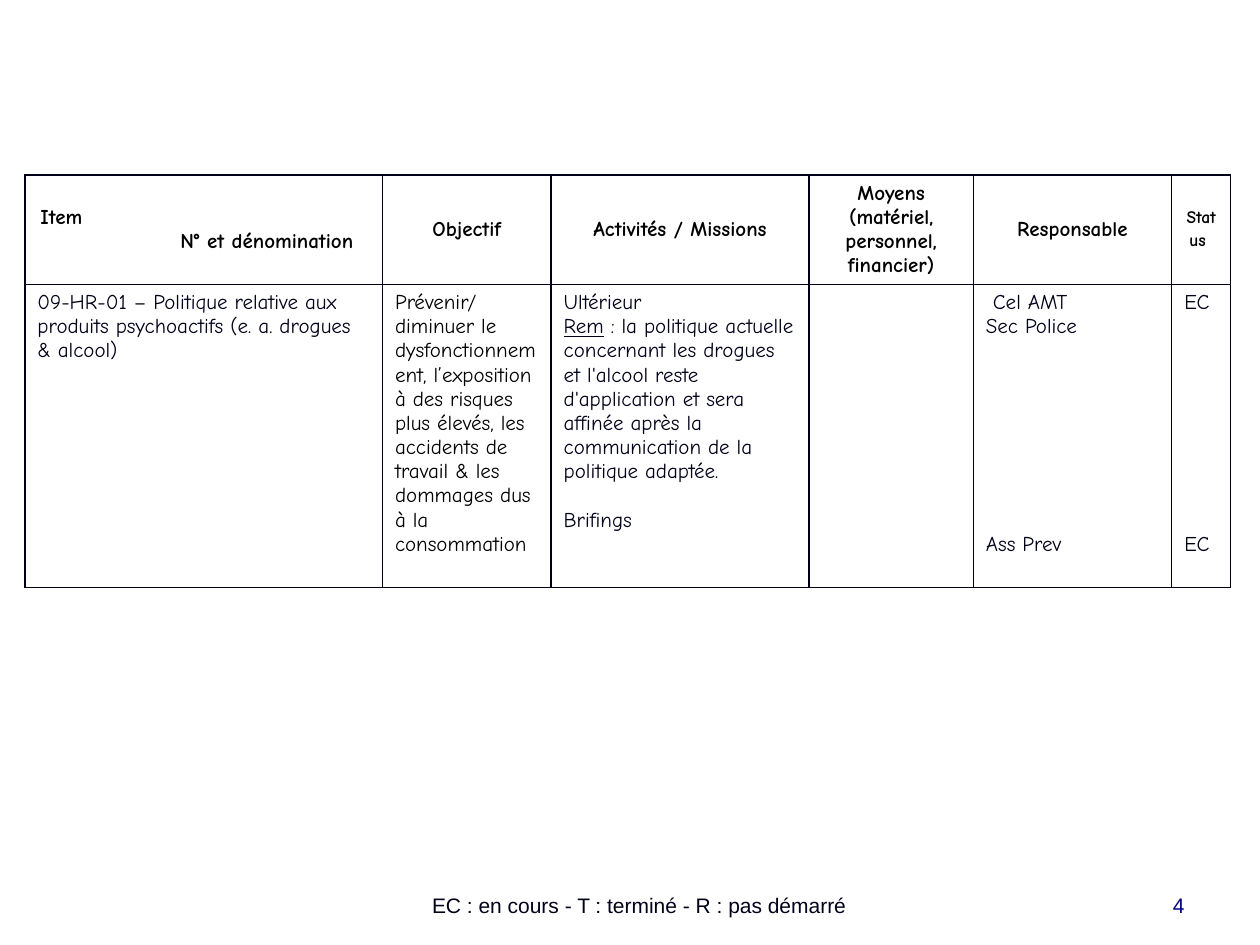
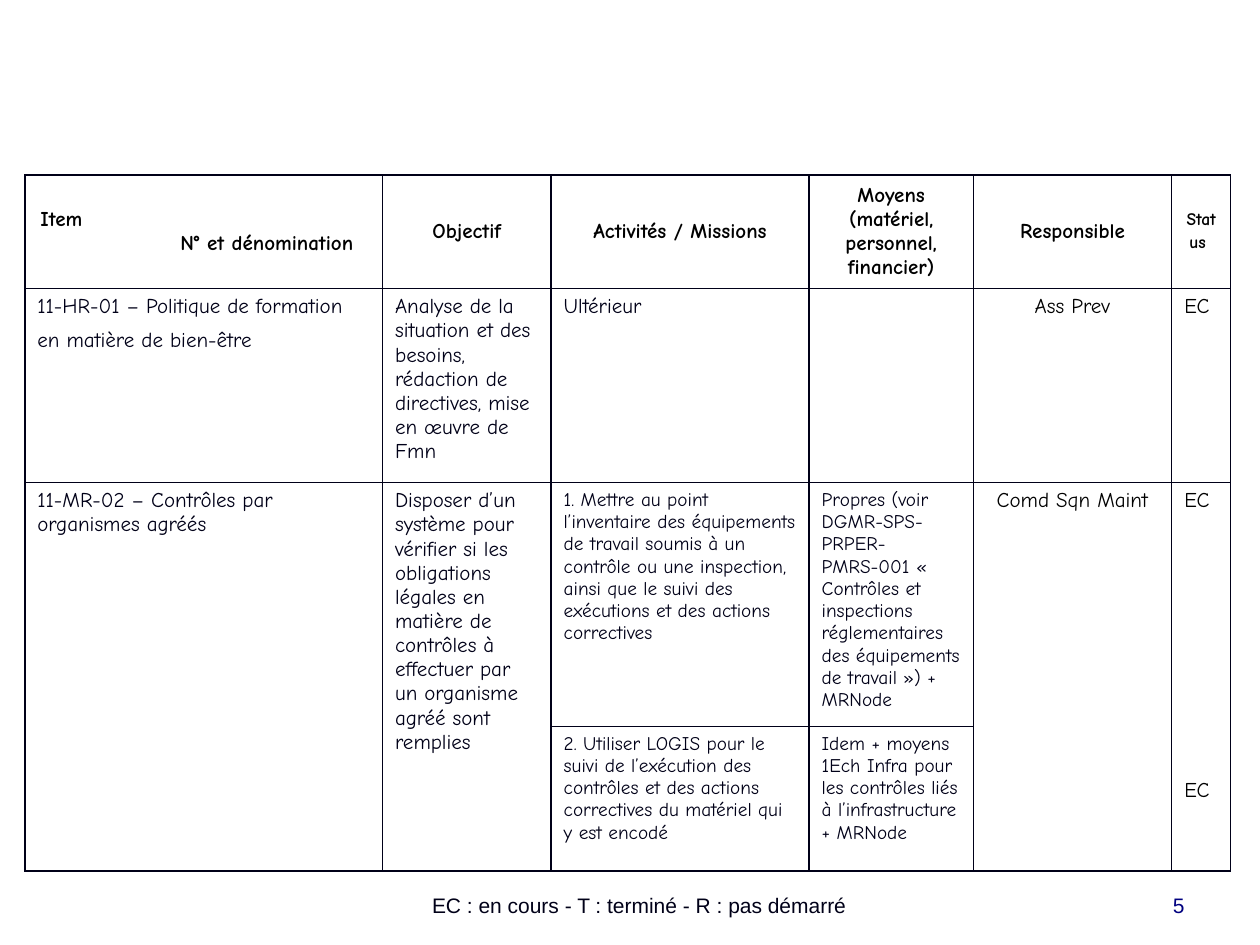
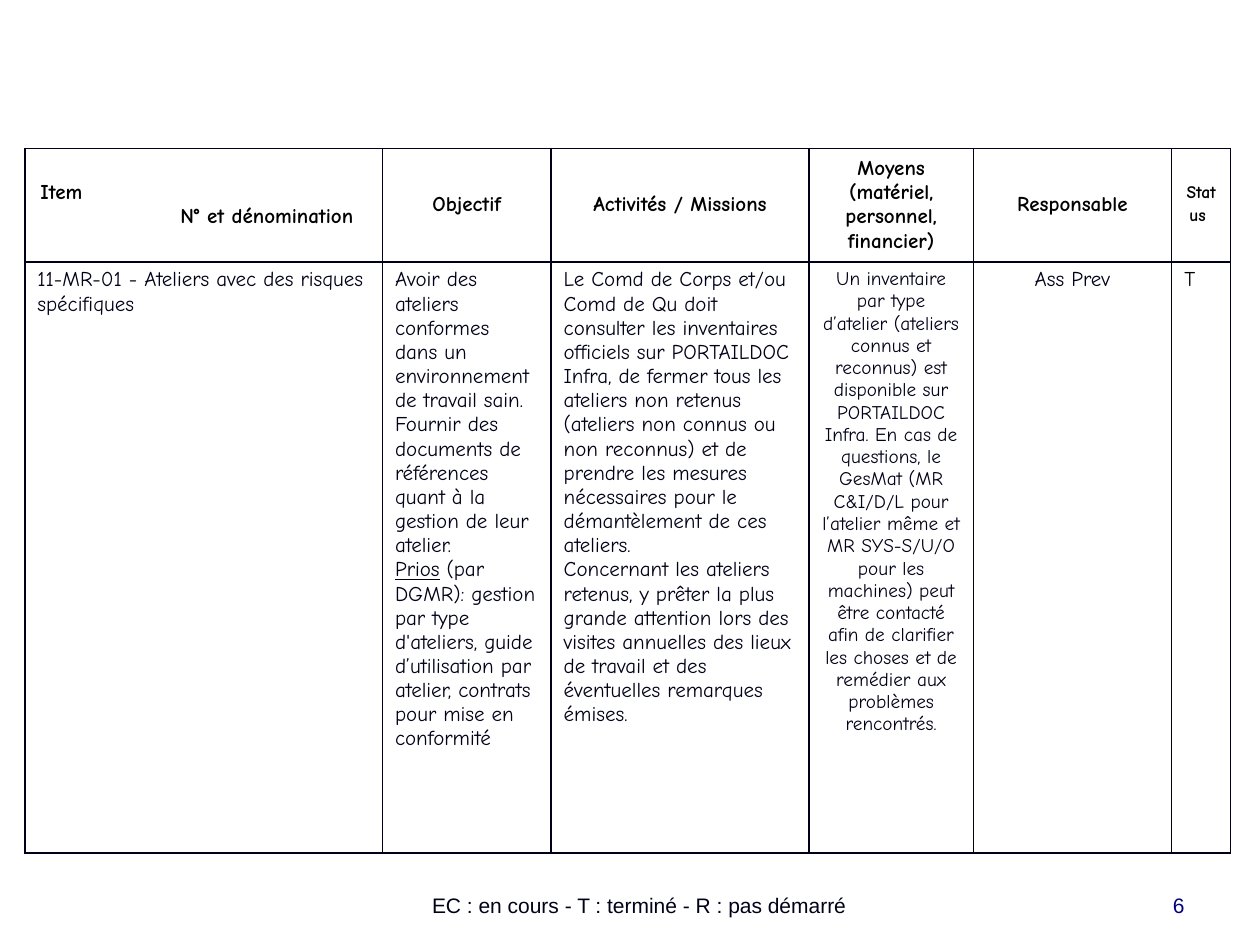
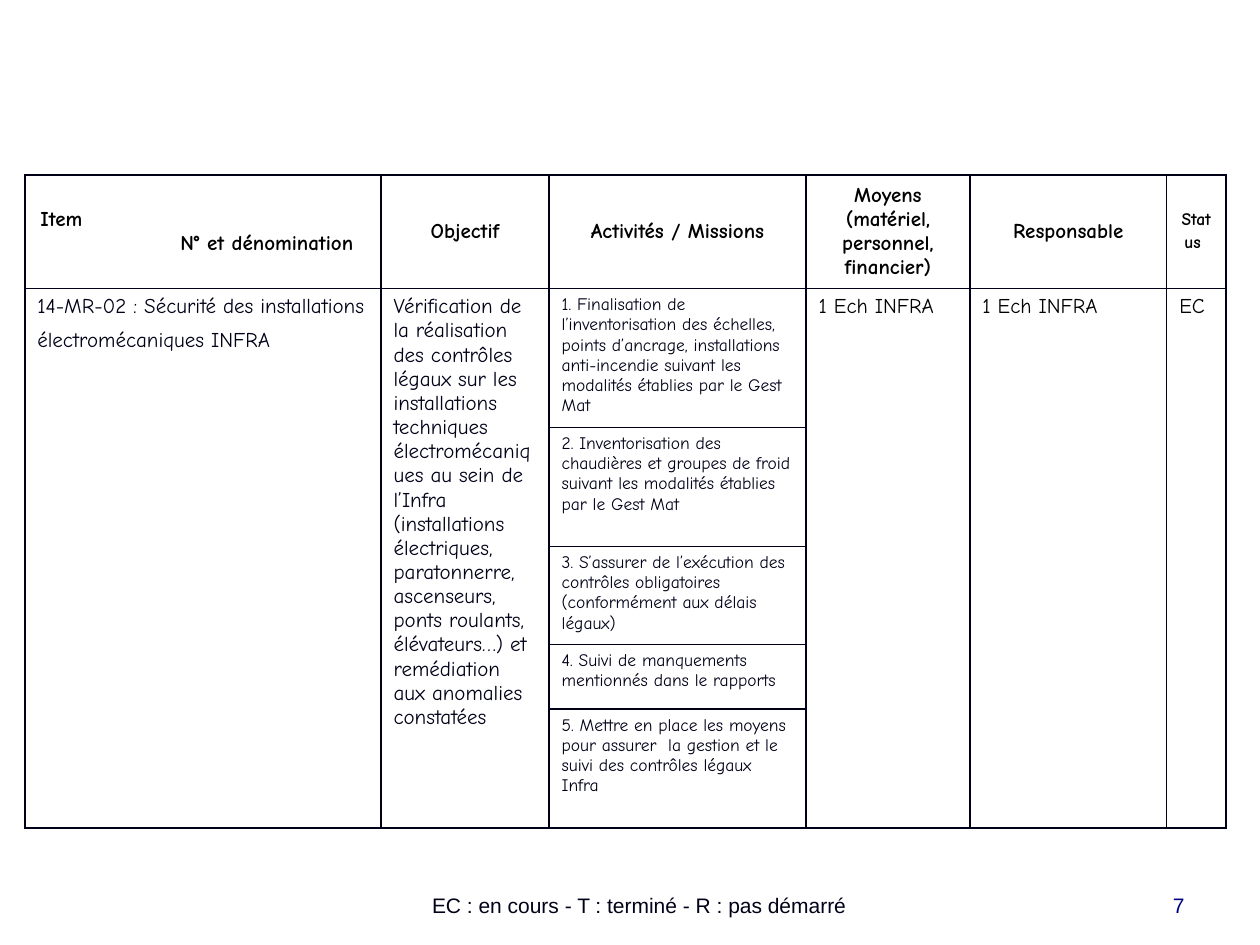
from lxml import etree
from pptx import Presentation
from pptx import util as u
from pptx.dml.color import RGBColor
from pptx.enum import text as t
from pptx.oxml import ns

INK = RGBColor(0x00, 0x00, 0x18)
BLACK = RGBColor(0x00, 0x00, 0x00)
NAVY = RGBColor(0x00, 0x00, 0x80)
FONT = "Comic Neue"
LINE = 13.8  # height of one text line, in points
MID, LEFT, RIGHT = t.PP_ALIGN.CENTER, t.PP_ALIGN.LEFT, t.PP_ALIGN.RIGHT

HEADS = ["Item\nN° et dénomination", "Objectif", "Activités / Missions",
         "Moyens (matériel, personnel, financier)", "Responsable", "Status"]
LEGEND = "EC : en cours - T : terminé - R : pas démarré"
COLS = [7.21, 3.4, 5.2, 3.31, 4, 1.19]
SLIM = [7.18, 3.39, 5.18, 3.3, 3.97, 1.19]
HEAD = {"size": 12, "bold": True, "color": BLACK, "align": MID}
DARK = {"color": BLACK}
SMALL = {"size": 11}
TINY = {"size": 10}


def put(frame, words, size=12, color=INK, align=LEFT, bold=False, font=FONT, gap=0):
    """Write one paragraph a line; _word_ is underlined, gap is lines before the last."""
    lines = words.split("\n")
    for n, line in enumerate(lines):
        para = frame.paragraphs[0] if n == 0 else frame.add_paragraph()
        para.alignment = align
        if gap and n == len(lines) - 1:
            para.space_before = u.Pt(gap * LINE)
        for k, part in enumerate(line.split("_")):
            if not part:
                continue
            run = para.add_run()
            run.text = part
            look = {"name": font, "size": u.Pt(size), "bold": bold, "underline": k % 2 == 1}
            for key, val in look.items():
                setattr(run.font, key, val)
            run.font.color.rgb = color


# Each cell: (row, column): (text, format); "span" merges a cell down to the last row.
PAGES = [
    {"num": 4, "top": 3.53, "cols": COLS, "rows": [2.2, 6.11], "cells": {
        (1, 0): ("09-HR-01 – Politique relative aux produits psychoactifs (e. a. drogues & alcool)", {}),
        (1, 1): ("Prévenir/diminuer le dysfonctionnement, l’exposition à des risques plus élevés, "
                 "les accidents de travail & les dommages dus à la consommation", DARK),
        (1, 2): ("Ultérieur\n_Rem_ : la politique actuelle concernant les drogues et l'alcool reste "
                 "d'application et sera\naffinée après la communication de la politique adaptée.\n"
                 "Brifings", {"gap": 1}),
        (1, 4): (" Cel AMT\nSec Police\nAss Prev", {"gap": 8}),
        (1, 5): ("EC\nEC", {"gap": 9}),
    }},
    {"num": 5, "top": 3.53, "cols": COLS, "rows": [2.2, 3.91, 4.75, 2.92],
     "who": "Responsible", "span": (2, [0, 1, 4, 5]), "tall": (1, 0), "cells": {
        (1, 0): ("11-HR-01 – Politique de formation en matière de bien-être", {}),
        (1, 1): ("Analyse de la situation et des besoins, rédaction de directives, "
                 "mise en œuvre de Fmn", {}),
        (1, 2): ("Ultérieur", {}),
        (1, 4): ("Ass Prev", {"color": BLACK, "align": MID}),
        (1, 5): ("EC", DARK),
        (2, 0): ("11-MR-02 – Contrôles par organismes agréés", {}),
        (2, 1): ("Disposer d’un système pour vérifier si les obligations légales en matière de "
                 "contrôles à effectuer par un organisme agréé sont remplies", {}),
        (2, 2): ("1. Mettre au point l’inventaire des équipements de travail soumis à un contrôle "
                 "ou une inspection, ainsi que le suivi des exécutions et des actions correctives", SMALL),
        (2, 3): ("Propres (voir DGMR-SPS-PRPER-PMRS-001 « Contrôles et inspections réglementaires "
                 "des équipements de travail ») + MRNode", SMALL),
        (2, 4): ("Comd Sqn Maint", {"color": BLACK, "align": MID}),
        (2, 5): ("EC\nEC", {"color": BLACK, "gap": 11}),
        (3, 2): ("2. Utiliser LOGIS pour le suivi de l’exécution des contrôles et des actions "
                 "correctives du matériel qui y est encodé", SMALL),
        (3, 3): ("Idem + moyens 1Ech Infra pour les contrôles liés à l’infrastructure + MRNode", SMALL),
    }},
    {"num": 6, "top": 2.99, "cols": COLS, "rows": [2.2, 11.92], "cells": {
        (1, 0): ("11-MR-01 - Ateliers avec des risques spécifiques", {}),
        (1, 1): ("Avoir des ateliers conformes dans un environnement de travail sain. Fournir des "
                 "documents de références quant à la gestion de leur atelier.\n_Prios_ (par DGMR): "
                 "gestion par type d'ateliers, guide d’utilisation par atelier, contrats pour mise "
                 "en conformité", {}),
        (1, 2): ("Le Comd de Corps et/ou Comd de Qu doit consulter les inventaires officiels sur "
                 "PORTAILDOC Infra, de fermer tous les ateliers non retenus (ateliers non connus ou "
                 "non reconnus) et de prendre les mesures nécessaires pour le démantèlement de ces "
                 "ateliers.\nConcernant les ateliers retenus, y prêter la plus grande attention lors "
                 "des visites annuelles des lieux de travail et des éventuelles remarques émises.", {}),
        (1, 3): ("Un inventaire par type d’atelier (ateliers connus et reconnus) est disponible sur "
                 "PORTAILDOC Infra. En cas de questions, le GesMat (MR C&I/D/L pour l’atelier même et "
                 "MR SYS-S/U/O pour les machines) peut être contacté afin de clarifier les choses et "
                 "de remédier aux problèmes rencontrés.", {"size": 11, "align": MID}),
        (1, 4): ("Ass Prev", {"align": MID}),
        (1, 5): ("T", DARK),
    }},
    {"num": 7, "top": 3.53, "cols": SLIM, "rows": [2.2, 2.7, 2.4, 1.98, 1.3, 2.4],
     "span": (1, [0, 1, 3, 4, 5]), "tall": (1, 0), "cells": {
        (1, 0): ("14-MR-02 : Sécurité des installations électromécaniques INFRA", {}),
        (1, 1): ("Vérification de la réalisation des contrôles légaux sur les installations "
                 "techniques électromécaniques au sein de l’Infra (installations électriques, "
                 "paratonnerre, ascenseurs, ponts roulants, élévateurs…) et remédiation aux "
                 "anomalies constatées", {}),
        (1, 2): ("1. Finalisation de l’inventorisation des échelles, points d’ancrage, installations "
                 "anti-incendie suivant les modalités établies par le Gest Mat", TINY),
        (1, 3): ("1 Ech INFRA", DARK),
        (1, 4): ("1 Ech INFRA", DARK),
        (1, 5): ("EC", DARK),
        (2, 2): ("2. Inventorisation des chaudières et groupes de froid suivant les modalités "
                 "établies par le Gest Mat", TINY),
        (3, 2): ("3. S’assurer de l’exécution des contrôles obligatoires (conformément aux délais "
                 "légaux)", TINY),
        (4, 2): ("4. Suivi de manquements mentionnés dans le rapports", TINY),
        (5, 2): ("5. Mettre en place les moyens pour assurer  la gestion et le suivi des contrôles "
                 "légaux Infra", TINY),
    }},
]

deck = Presentation()
deck.slide_width, deck.slide_height = u.Cm(25.4), u.Cm(19.05)

for page in PAGES:
    slide = deck.slides.add_slide(deck.slide_layouts[6])
    cols, rows = page["cols"], page["rows"]

    # Grid with plain borders
    grid = slide.shapes.add_table(len(rows), len(cols), u.Cm(0.5), u.Cm(page["top"]),
                                  u.Cm(sum(cols)), u.Cm(sum(rows))).table
    grid.first_row = grid.horz_banding = False
    for col, wide in zip(grid.columns, cols):
        col.width = u.Cm(wide)
    for row, high in zip(grid.rows, rows):
        row.height = u.Cm(high)
    for cell in grid.iter_cells():
        props = cell._tc.get_or_add_tcPr()
        for side in ("lnL", "lnR", "lnT", "lnB"):
            edge = etree.SubElement(props, ns.qn("a:" + side), w=str(u.Pt(1)))
            fill = etree.SubElement(edge, ns.qn("a:solidFill"))
            etree.SubElement(fill, ns.qn("a:srgbClr"), val=str(INK))
        cell.fill.background()
    if "span" in page:
        first, spans = page["span"]
        for c in spans:
            grid.cell(first, c).merge(grid.cell(len(rows) - 1, c))

    # Heading row
    heads = HEADS[:4] + [page.get("who", HEADS[4])]
    for c, head in enumerate(heads):
        cell = grid.cell(0, c)
        cell.vertical_anchor = t.MSO_ANCHOR.MIDDLE
        put(cell.text_frame, head, **HEAD)
    for para, inset in zip(grid.cell(0, 0).text_frame.paragraphs, (0.06, 2.88)):
        para.alignment = LEFT
        para._p.get_or_add_pPr().set("marL", str(u.Cm(inset)))
    state = grid.cell(0, 5)
    state.vertical_anchor = t.MSO_ANCHOR.MIDDLE
    state._tc.get_or_add_tcPr().set("vert", "eaVert")
    put(state.text_frame, HEADS[5], **{**HEAD, "size": 10})
    put(state.text_frame, " ", **HEAD)

    # Body rows
    for (r, c), (words, look) in page["cells"].items():
        put(grid.cell(r, c).text_frame, words, **look)
    if "tall" in page:
        put(grid.cell(*page["tall"]).text_frame, "\t", size=18, font="Arial")

    # Legend and page number
    for left, wide, words, color, align in (
            (5.89, 14, LEGEND, INK, MID), (18.21, 5.92, str(page["num"]), NAVY, RIGHT)):
        frame = slide.shapes.add_textbox(u.Cm(left), u.Cm(17.35), u.Cm(wide), u.Cm(1.27)).text_frame
        frame.word_wrap = True
        frame.vertical_anchor = t.MSO_ANCHOR.BOTTOM
        put(frame, words, color=color, align=align, font="Arial")

deck.save("out.pptx")
